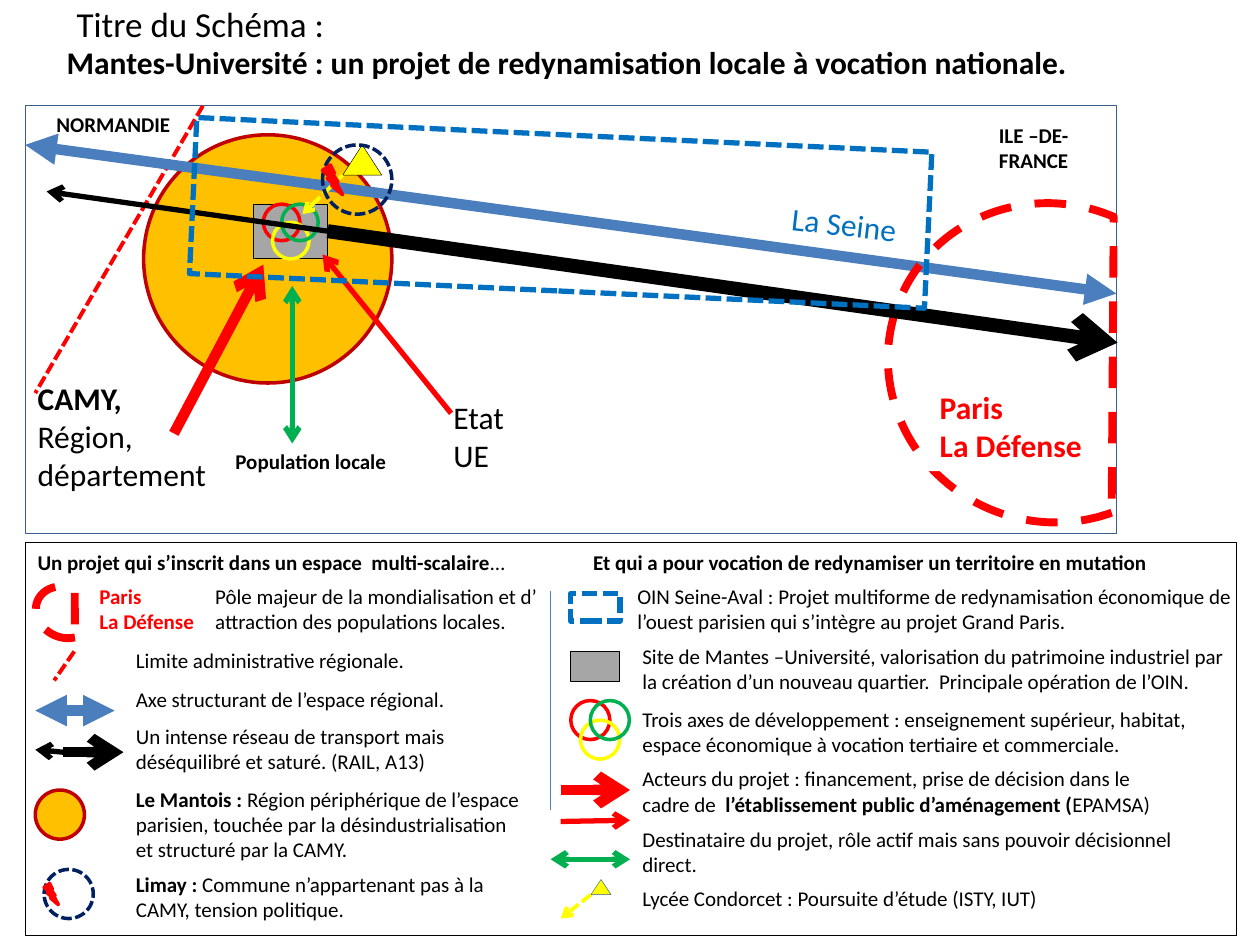
import pptx
import pptx.dml.color
import pptx.enum.dml
import pptx.enum.shapes
import pptx.enum.text
import pptx.oxml.ns
import pptx.util
from lxml import etree

RGBColor = pptx.dml.color.RGBColor
SHAPE = pptx.enum.shapes.MSO_SHAPE
DASH = pptx.enum.dml.MSO_LINE.DASH
SHORT_DASH = pptx.enum.dml.MSO_LINE.SQUARE_DOT
ANCHOR = pptx.enum.text.MSO_ANCHOR

BLACK = RGBColor(0, 0, 0)
WHITE = RGBColor(255, 255, 255)
RED = RGBColor(255, 0, 0)
DARK_RED = RGBColor(192, 0, 0)
YELLOW = RGBColor(255, 255, 0)
ORANGE = RGBColor(255, 192, 0)
GREEN = RGBColor(0, 176, 80)
GRAY = RGBColor(166, 166, 166)
BLUE = RGBColor(0, 112, 192)
RIVER_BLUE = RGBColor(75, 126, 188)
FRAME_BLUE = RGBColor(58, 95, 140)
NAVY = RGBColor(0, 32, 96)

COLUMNS, ROWS = 100, 75
CELL = pptx.util.Inches(0.1)
LEFT_LEGEND, RIGHT_LEGEND = 9.8, 50


def cells(*counts):
    return [round(count * CELL) for count in counts]


def add_text(slide, text, left, top, width, height, size=12, color=BLACK,
             bold=False, fill=None, rotation=0, anchor=ANCHOR.TOP):
    shape = slide.shapes.add_textbox(*cells(left, top, width, height))
    shape.rotation = rotation
    if fill is not None:
        shape.fill.solid()
        shape.fill.fore_color.rgb = fill
    frame = shape.text_frame
    frame.word_wrap = True
    frame.vertical_anchor = anchor
    for index, line in enumerate(text.split("\n")):
        paragraph = frame.add_paragraph() if index else frame.paragraphs[0]
        for position, part in enumerate(line.split("*")):
            if part:
                run = paragraph.add_run()
                run.text = part
                run.font.name = "Calibri"
                run.font.size = pptx.util.Pt(size)
                run.font.color.rgb = color
                run.font.bold = bold or position % 2 == 1
    return shape


def format_line(line, color, width, dash):
    line.color.rgb = color
    line.width = pptx.util.Pt(width)
    if dash is not None:
        line.dash_style = dash


def add_shape(slide, kind, left, top, width, height, color, line_width,
              fill=None, dash=None, rotation=0):
    shape = slide.shapes.add_shape(kind, *cells(left, top, width, height))
    shape.shadow.inherit = False
    shape.rotation = rotation
    if fill is None:
        shape.fill.background()
    else:
        shape.fill.solid()
        shape.fill.fore_color.rgb = fill
    format_line(shape.line, color, line_width, dash)
    return shape


def add_line(slide, start, end, color, width, dash=None, head=None, tail=None):
    connector = slide.shapes.add_connector(
        pptx.enum.shapes.MSO_CONNECTOR.STRAIGHT, *cells(*start, *end))
    format_line(connector.line, color, width, dash)
    properties = connector.element.spPr
    outline = properties.find(pptx.oxml.ns.qn("a:ln"))
    for tag, arrow in (("a:headEnd", head), ("a:tailEnd", tail)):
        if arrow:
            etree.SubElement(outline, pptx.oxml.ns.qn(tag), type=arrow)
    etree.SubElement(properties, pptx.oxml.ns.qn("a:effectLst"))
    return connector


def add_river(slide, start, end):
    add_line(slide, start, end, RIVER_BLUE, 6, head="triangle", tail="triangle")


def add_transport(slide, hub, east, west, width):
    return [add_line(slide, hub, east, BLACK, width, tail="arrow"),
            add_line(slide, hub, west, BLACK, 3, tail="arrow")]


def add_rings(slide, left, top, size):
    for step, (color, drop) in enumerate(((RED, 0), (YELLOW, size / 2), (GREEN, 0))):
        add_shape(slide, SHAPE.OVAL, left + step * size / 4, top + drop,
                  size, size, color, 2)


def add_business_district(slide, zone, label, size):
    add_shape(slide, SHAPE.CHORD, *zone, RED, 4.5, dash=DASH, rotation=23.1)
    add_text(slide, "Paris\nLa Défense", *label, size=size, color=RED,
             bold=True, fill=WHITE)


def add_school(slide, left, top, width, height, target, color):
    add_shape(slide, SHAPE.ISOSCELES_TRIANGLE, left, top, width, height,
              color, 0.25, fill=YELLOW)
    add_line(slide, (left, top + height), target, YELLOW, 2.25,
             dash=SHORT_DASH, tail="arrow")


def add_limay(slide, left, top, size):
    add_shape(slide, SHAPE.OVAL, left, top, size, size, NAVY, 2, dash=SHORT_DASH)
    add_shape(slide, SHAPE.LIGHTNING_BOLT, left, top + size * 0.29,
              size * 0.29, size * 0.43, RED, 2, fill=RED)


def draw_heading(slide):
    add_text(slide, "Titre du Schéma :", 5.1, 0, 90, 3.8, size=20,
             anchor=ANCHOR.MIDDLE)
    add_text(slide, "Mantes-Université : un projet de redynamisation locale "
             "à vocation nationale.", 4.3, 2.9, 83.5, 4, size=18, bold=True)


def draw_map(slide):
    add_shape(slide, SHAPE.RECTANGLE, 2, 8.4, 86.6, 33.9, FRAME_BLUE, 0.5, fill=WHITE)
    add_line(slide, (16.1, 8.4), (2.8, 31.2), RED, 2.25, dash=SHORT_DASH)
    add_shape(slide, SHAPE.OVAL, 11.4, 10.7, 19.7, 19.7, DARK_RED, 2, fill=ORANGE)
    add_text(slide, "La Seine", 61.8, 15.9, 12.7, 4.7, size=18, color=BLUE, rotation=6.5)
    add_river(slide, (2, 11.5), (88.6, 23.3))
    add_text(slide, "NORMANDIE", 3.5, 8.4, 12.6, 3, bold=True)
    add_text(slide, "ILE –DE-FRANCE", 78.3, 9.2, 9.4, 5, bold=True)
    site = add_shape(slide, SHAPE.RECTANGLE, 20.1, 16.2, 5.9, 4.3, BLACK, 0.5, fill=GRAY)
    add_rings(slide, 20.9, 16.2, 2.9)
    add_line(slide, (13.8, 34.4), (20.9, 21), RED, 6, tail="arrow")
    add_text(slide, "*CAMY, *Région,\ndépartement", 2, 29.6, 16.5, 10.1, size=18)
    add_line(slide, (35.8, 32.8), (25.6, 20.2), RED, 3, tail="arrow")
    add_text(slide, "Etat UE", 35, 31.1, 7.1, 7.1, size=18)
    add_line(slide, (23.2, 22.7), (23.2, 35.2), GREEN, 3, head="arrow", tail="arrow")
    add_text(slide, "Population locale", 17.7, 35.1, 18.1, 3, bold=True)
    add_business_district(slide, (70.4, 16.2, 26.1, 25.2), (73.6, 30.3, 14.2, 7.1), 18)
    for axis in add_transport(slide, (26.1, 18.4), (88.7, 27.2), (3.7, 15.2), 8):
        axis.begin_connect(site, 3)
    add_shape(slide, SHAPE.RECTANGLE, 15.3, 10.7, 58.4, 12.4, BLUE, 3,
              dash=SHORT_DASH, rotation=2.7)
    add_school(slide, 27.2, 11.5, 3.1, 2.4, (24, 17), BLACK)
    add_limay(slide, 25.6, 11.5, 5.5)


def draw_legend_symbols(slide):
    add_shape(slide, SHAPE.RECTANGLE, 2, 43, 96.1, 31.2, BLACK, 0.25)
    add_line(slide, (43.7, 46.9), (43.7, 64.3), RIVER_BLUE, 0.75)
    add_business_district(slide, (2.8, 46.6, 4.7, 4), (6.9, 45.8, 10.2, 5), 12)
    add_line(slide, (5.9, 51.7), (4.3, 54), RED, 2.25, dash=SHORT_DASH)
    add_river(slide, (2.8, 56.4), (9.1, 56.4))
    add_transport(slide, (5, 59.7), (9.8, 59.7), (2.8, 59.5), 6)
    add_shape(slide, SHAPE.OVAL, 2.8, 62.7, 3.9, 3.9, DARK_RED, 2, fill=ORANGE)
    add_limay(slide, 3.5, 69, 3.9)
    add_shape(slide, SHAPE.RECTANGLE, 45.3, 47.1, 3.9, 2.2, BLUE, 3, dash=SHORT_DASH)
    add_shape(slide, SHAPE.RECTANGLE, 45.3, 51.7, 3.9, 2.4, BLACK, 0.5, fill=GRAY)
    add_rings(slide, 45.3, 55.6, 3.1)
    add_line(slide, (44.5, 62.7), (50, 62.7), RED, 6, tail="arrow")
    add_line(slide, (44.5, 65.2), (50, 65.1), RED, 3, tail="arrow")
    add_line(slide, (50, 68.2), (43.7, 68.2), GREEN, 3, head="arrow", tail="arrow")
    add_school(slide, 46.9, 69.8, 1.6, 1.2, (44.5, 72.9), FRAME_BLUE)


def draw_legend_texts(slide):
    entries = [
        ("*Un projet qui s’inscrit dans un espace  multi-scalaire*…", 2, 43.1, 39.4, 3),
        ("Pôle majeur de la mondialisation et d’ attraction des populations locales.",
         16.1, 45.8, 28.3, 5),
        ("Limite administrative régionale.", LEFT_LEGEND, 50.9, 31.5, 3),
        ("Axe structurant de l’espace régional.", LEFT_LEGEND, 54, 26.8, 3),
        ("Un intense réseau de transport mais déséquilibré et saturé. (RAIL, A13)",
         LEFT_LEGEND, 56.9, 33.1, 5),
        ("*Le Mantois : *Région périphérique de l’espace parisien, touchée par la "
         "désindustrialisation et structuré par la CAMY.", LEFT_LEGEND, 61.9, 33.1, 7.1),
        ("*Limay : *Commune n’appartenant pas à la CAMY, tension politique.",
         LEFT_LEGEND, 68.7, 33.9, 5),
        ("*Et qui a pour vocation de redynamiser un territoire en mutation*",
         46.1, 43.1, 48.8, 3),
        ("OIN Seine-Aval : Projet multiforme de redynamisation économique de l’ouest "
         "parisien qui s’intègre au projet Grand Paris.", 49.6, 45.8, 49.2, 5),
        ("Site de Mantes –Université, valorisation du patrimoine industriel par la "
         "création d’un nouveau quartier.  Principale opération de l’OIN.",
         RIGHT_LEGEND, 50.6, 48.4, 5),
        ("Trois axes de développement : enseignement supérieur, habitat, espace "
         "économique à vocation tertiaire et commerciale.", RIGHT_LEGEND, 55.6, 46.4, 5),
        ("Acteurs du projet : financement, prise de décision dans le cadre de  "
         "*l’établissement public d’aménagement (*EPAMSA)", RIGHT_LEGEND, 60.3, 42.5, 5),
        ("Destinataire du projet, rôle actif mais sans pouvoir décisionnel direct.",
         RIGHT_LEGEND, 65.1, 44.9, 5),
        ("Lycée Condorcet : Poursuite d’étude (ISTY, IUT)", RIGHT_LEGEND, 69.8, 46.4, 3),
    ]
    for entry in entries:
        add_text(slide, *entry)


def main():
    presentation = pptx.Presentation()
    presentation.slide_width = COLUMNS * CELL
    presentation.slide_height = ROWS * CELL
    slide = presentation.slides.add_slide(presentation.slide_layouts[6])
    draw_heading(slide)
    draw_map(slide)
    draw_legend_symbols(slide)
    draw_legend_texts(slide)
    presentation.save("out.pptx")


if __name__ == "__main__":
    main()
